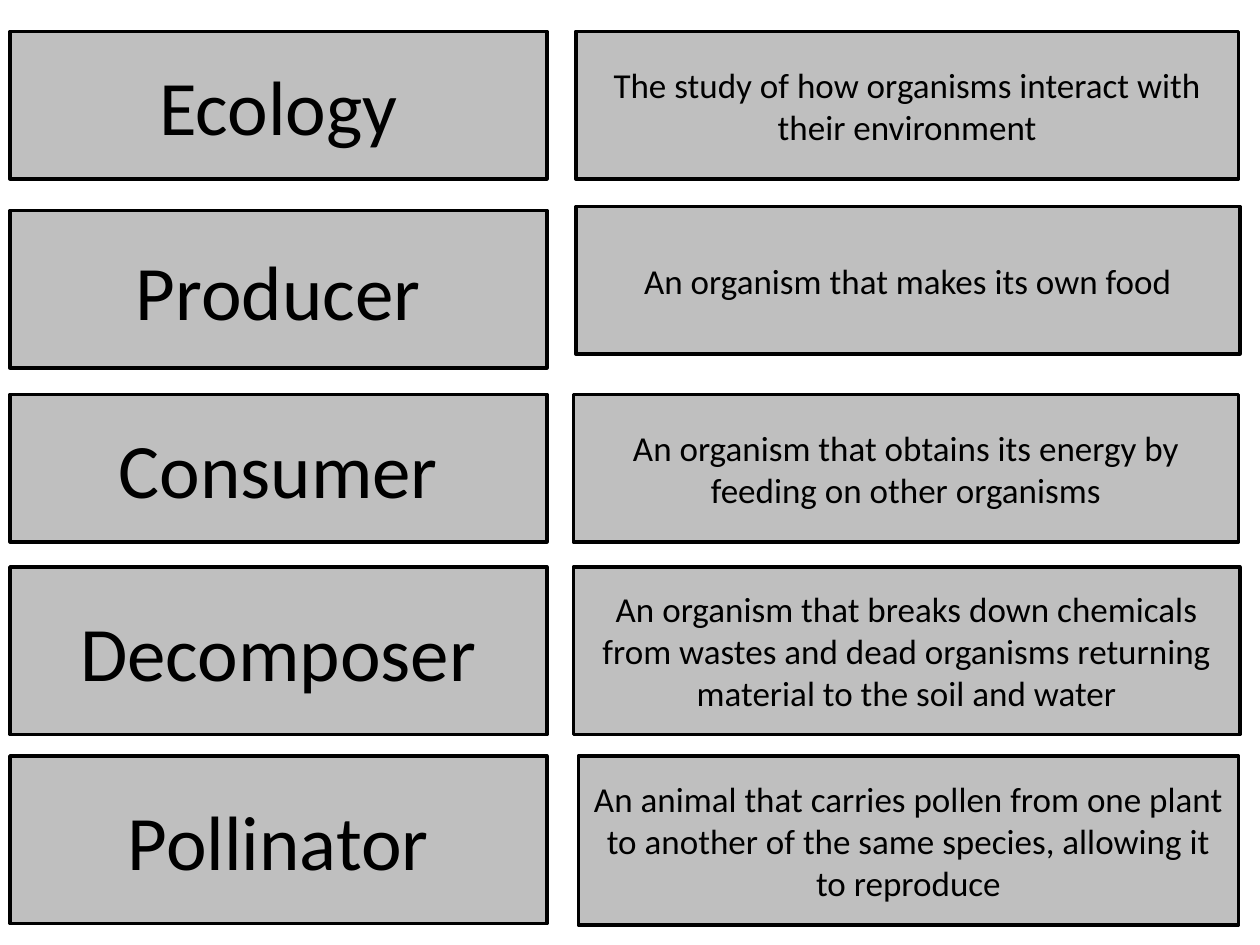
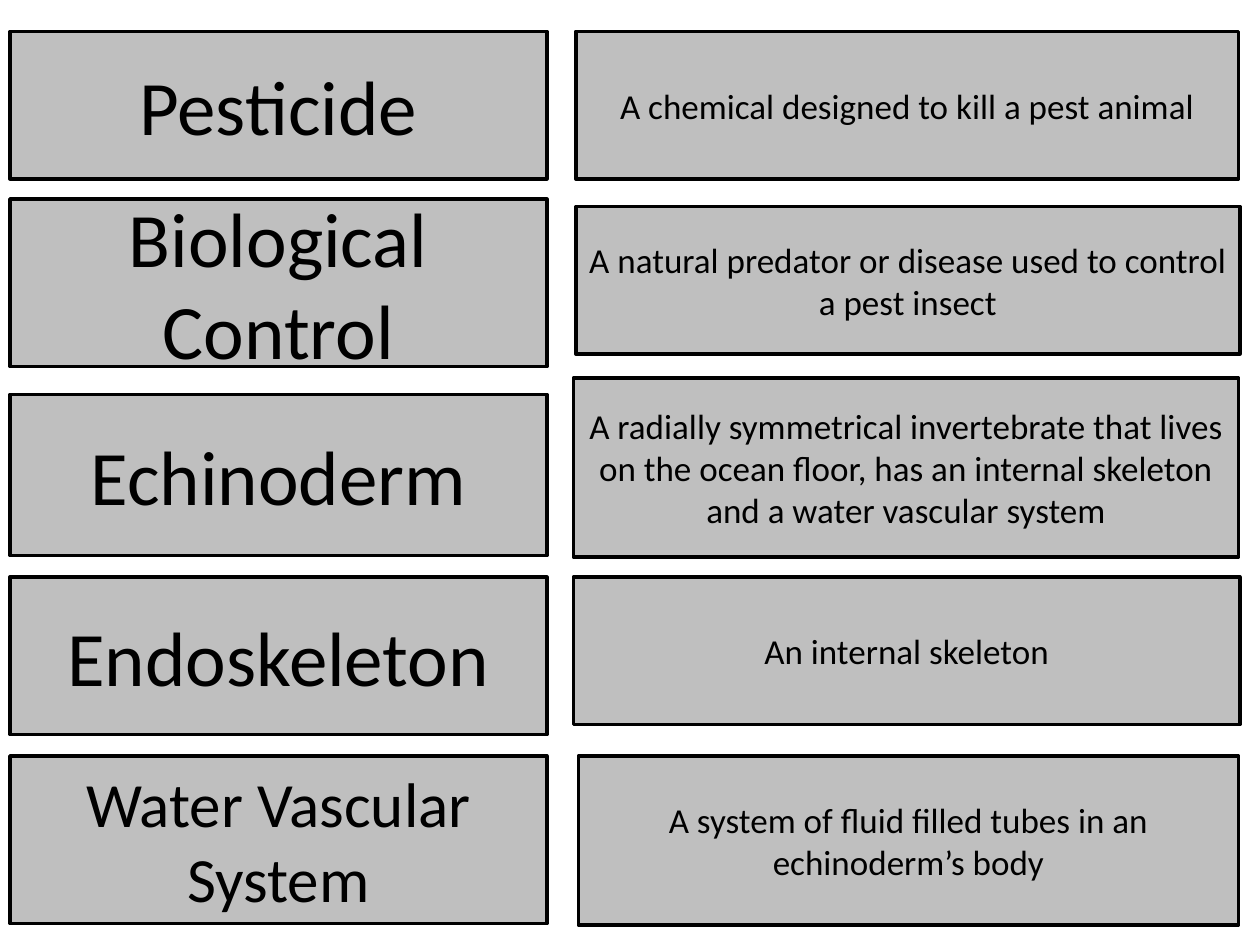
from dataclasses import dataclass

from pptx import Presentation
from pptx.dml.color import RGBColor
from pptx.enum.shapes import MSO_SHAPE
from pptx.enum.text import MSO_ANCHOR, PP_ALIGN
from pptx.slide import Slide
from pptx.util import Inches, Pt

BOX = MSO_SHAPE.FLOWCHART_PROCESS
MIDDLE = MSO_ANCHOR.MIDDLE
CENTER = PP_ALIGN.CENTER


@dataclass(frozen=True)
class Theme:
    font: str = "Calibri"
    fill: RGBColor = RGBColor(0xBF, 0xBF, 0xBF)
    ink: RGBColor = RGBColor(0, 0, 0)
    line: float = 2
    term: int = 44
    long: int = 36
    body: int = 20


@dataclass(frozen=True)
class Span:
    start: float
    size: float


@dataclass(frozen=True)
class Card:
    term: str
    text: str
    left: Span
    right: Span
    size: int


THEME = Theme()
TERM = Span(0.08, 4.26)
MEANINGS = (
    Span(4.57, 5.26),
    Span(4.57, 5.27),
    Span(4.55, 5.28),
    Span(4.55, 5.29),
    Span(4.59, 5.24),
)

TOP = Span(0.25, 1.17)
SECOND = Span(1.64, 1.17)
THIRD = Span(3.13, 1.17)
FOURTH = Span(4.5, 1.33)
LAST = Span(6, 1.33)
LAST_TEXT = Span(6, 1.34)

DECKS = (
    (
        Card("Ecology",
             "The study of how organisms interact with their environment",
             TOP, TOP, THEME.term),
        Card("Producer", "An organism that makes its own food",
             Span(1.67, 1.25), SECOND, THEME.term),
        Card("Consumer",
             "An organism that obtains its energy by feeding on other organisms",
             THIRD, THIRD, THEME.term),
        Card("Decomposer",
             "An organism that breaks down chemicals from wastes and dead "
             "organisms returning material to the soil and water",
             FOURTH, FOURTH, THEME.term),
        Card("Pollinator",
             "An animal that carries pollen from one plant to another of the "
             "same species, allowing it to reproduce",
             LAST, LAST_TEXT, THEME.term),
    ),
    (
        Card("Pesticide", "A chemical designed to kill a pest animal",
             TOP, TOP, THEME.term),
        Card("Biological Control",
             "A natural predator or disease used to control a pest insect",
             Span(1.58, 1.33), SECOND, THEME.term),
        Card("Echinoderm",
             "A radially symmetrical invertebrate that lives on the ocean "
             "floor, has an internal skeleton and a water vascular system",
             Span(3.13, 1.28), Span(3, 1.42), THEME.term),
        Card("Endoskeleton", "An internal skeleton",
             Span(4.58, 1.25), Span(4.58, 1.17), THEME.term),
        Card("Water Vascular System",
             "A system of fluid filled tubes in an echinoderm’s body",
             LAST, LAST_TEXT, THEME.long),
    ),
)


def draw_box(slide: Slide, text: str, col: Span, row: Span, size: int) -> None:
    box = slide.shapes.add_shape(
        BOX, Inches(col.start), Inches(row.start),
        Inches(col.size), Inches(row.size))
    box.shadow.inherit = False
    box.fill.solid()
    box.fill.fore_color.rgb = THEME.fill
    box.line.color.rgb = THEME.ink
    box.line.width = Pt(THEME.line)
    frame = box.text_frame
    frame.word_wrap = True
    frame.vertical_anchor = MIDDLE
    para = frame.paragraphs[0]
    para.text = text
    para.alignment = CENTER
    para.font.name = THEME.font
    para.font.size = Pt(size)
    para.font.color.rgb = THEME.ink


def draw_card(slide: Slide, card: Card, meaning: Span) -> None:
    draw_box(slide, card.term, TERM, card.left, card.size)
    draw_box(slide, card.text, meaning, card.right, THEME.body)


def main() -> None:
    deck = Presentation()
    deck.slide_width = Inches(10)
    deck.slide_height = Inches(7.5)
    blank = deck.slide_layouts[6]
    for cards in DECKS:
        slide = deck.slides.add_slide(blank)
        for card, meaning in zip(cards, MEANINGS):
            draw_card(slide, card, meaning)
    deck.save("out.pptx")


if __name__ == "__main__":
    main()
